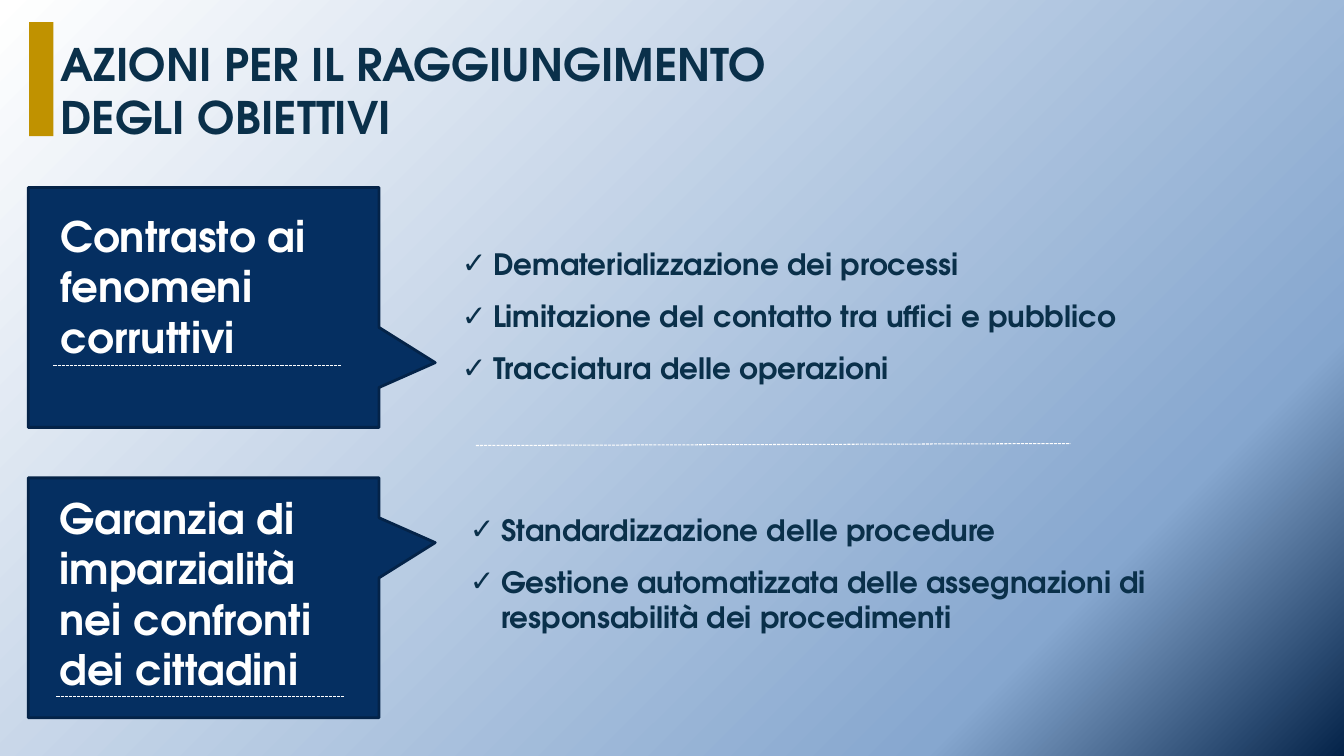
"""Builds the slide on actions for reaching the objectives."""
from lxml import etree
from pptx import Presentation
from pptx.dml.color import RGBColor
from pptx.enum.dml import MSO_LINE
from pptx.enum.shapes import MSO_CONNECTOR, MSO_SHAPE
from pptx.enum.text import MSO_ANCHOR, MSO_AUTO_SIZE, PP_ALIGN
from pptx.oxml import parse_xml
from pptx.oxml.ns import nsdecls, qn
from pptx.util import Inches, Pt

COLORS = {"ink": "0A304A", "gold": "C09200", "navy": "052F61", "edge": "042348",
          "white": "FFFFFF", "sky": "86A7CF", "night": "042349"}
FONT = "TeX Gyre Adventor"


def color(name):
    return RGBColor.from_string(COLORS[name])


def write(shape, box, texts, size, ink, anchor, bullet=None):
    shape.left, shape.top, shape.width, shape.height = [Inches(v) for v in box]
    frame = shape.text_frame
    frame.word_wrap = True
    frame.auto_size = MSO_AUTO_SIZE.NONE
    frame.vertical_anchor = anchor
    for index, text in enumerate(texts):
        paragraph = frame.add_paragraph() if index else frame.paragraphs[0]
        if bullet:
            properties = paragraph._p.get_or_add_pPr()
            properties.set("marL", str(Inches(0.31)))
            properties.set("indent", str(Inches(-0.31)))
            etree.SubElement(properties, qn("a:buChar")).set("char", bullet)
        paragraph.alignment = PP_ALIGN.LEFT
        paragraph.space_before = Pt(6 if index else 0)
        paragraph.space_after = Pt(6 if index < len(texts) - 1 else 0)
        run = paragraph.add_run()
        run.text = text
        run.font.name = FONT
        run.font.size = Pt(size)
        run.font.bold = True
        run.font.color.rgb = color(ink)


presentation = Presentation()
presentation.slide_width = Inches(13.33)
presentation.slide_height = Inches(7.5)
slide = presentation.slides.add_slide(presentation.slide_layouts[3])
shapes = slide.shapes

background = slide.background.fill
background.gradient()
background.gradient_angle = 315
stop_list = background._fill._gradFill.find(qn("a:gsLst"))
for stop in list(stop_list):
    stop_list.remove(stop)
for position, name in [(0, "white"), (80, "sky"), (100, "night")]:
    stop_list.append(parse_xml(
        f'<a:gs {nsdecls("a")} pos="{position * 1000}">'
        f'<a:srgbClr val="{COLORS[name]}"/></a:gs>'))

write(shapes.title, (0.5, 0.31, 8.43, 0.91),
      ["AZIONI PER IL RAGGIUNGIMENTO DEGLI OBIETTIVI"], 32, "ink", MSO_ANCHOR.TOP)

action_lists = [
    ((4.48, 2.16, 7.67, 1.95), ["Dematerializzazione dei processi",
                                "Limitazione del contatto tra uffici e pubblico",
                                "Tracciatura delle operazioni"]),
    ((4.56, 4.71, 7.11, 1.95), ["Standardizzazione delle procedure",
                                "Gestione automatizzata delle assegnazioni di "
                                "responsabilità dei procedimenti"]),
]
for placeholder, (box, actions) in zip(list(slide.placeholders)[1:], action_lists):
    write(placeholder, box, actions, 21, "ink", MSO_ANCHOR.MIDDLE, "✓")

title_bar = shapes.add_shape(MSO_SHAPE.RECTANGLE, Inches(0.29), Inches(0.22),
                             Inches(0.24), Inches(1.13))
title_bar.shadow.inherit = False
title_bar.fill.solid()
title_bar.fill.fore_color.rgb = color("gold")
title_bar.line.fill.background()

objectives = [
    (1.31, 270, (0.5, 2.11, 2.96, 1.46), "Contrasto ai fenomeni corruttivi"),
    (4.19, 90, (0.49, 4.91, 3.15, 1.95),
     "Garanzia di imparzialità nei confronti dei cittadini"),
]
for top, rotation, box, objective in objectives:
    callout = shapes.add_shape(MSO_SHAPE.RECTANGULAR_CALLOUT, Inches(0.83), Inches(top),
                               Inches(2.38), Inches(3.48))
    callout.rotation = rotation
    if rotation == 90:
        callout._element.spPr.find(qn("a:xfrm")).set("flipV", "1")
    callout.adjustments[0] = -0.23
    callout.adjustments[1] = 0.66
    callout.shadow.inherit = False
    callout.fill.solid()
    callout.fill.fore_color.rgb = color("navy")
    callout.line.color.rgb = color("edge")
    callout.line.width = Pt(2)
    label = shapes.add_textbox(0, 0, 0, 0)
    write(label, box, [objective], 30, "white", MSO_ANCHOR.MIDDLE)

for x1, y1, x2, y2 in [(0.53, 3.63, 3.39, 3.63), (0.56, 6.91, 3.42, 6.91),
                       (4.72, 4.42, 10.62, 4.4)]:
    rule = shapes.add_connector(MSO_CONNECTOR.STRAIGHT, Inches(x1), Inches(y1),
                                Inches(x2), Inches(y2))
    rule.line.color.rgb = color("white")
    rule.line.width = Pt(0.75)
    rule.line.dash_style = MSO_LINE.SQUARE_DOT
    etree.SubElement(rule._element.spPr, qn("a:effectLst"))

presentation.save("out.pptx")
